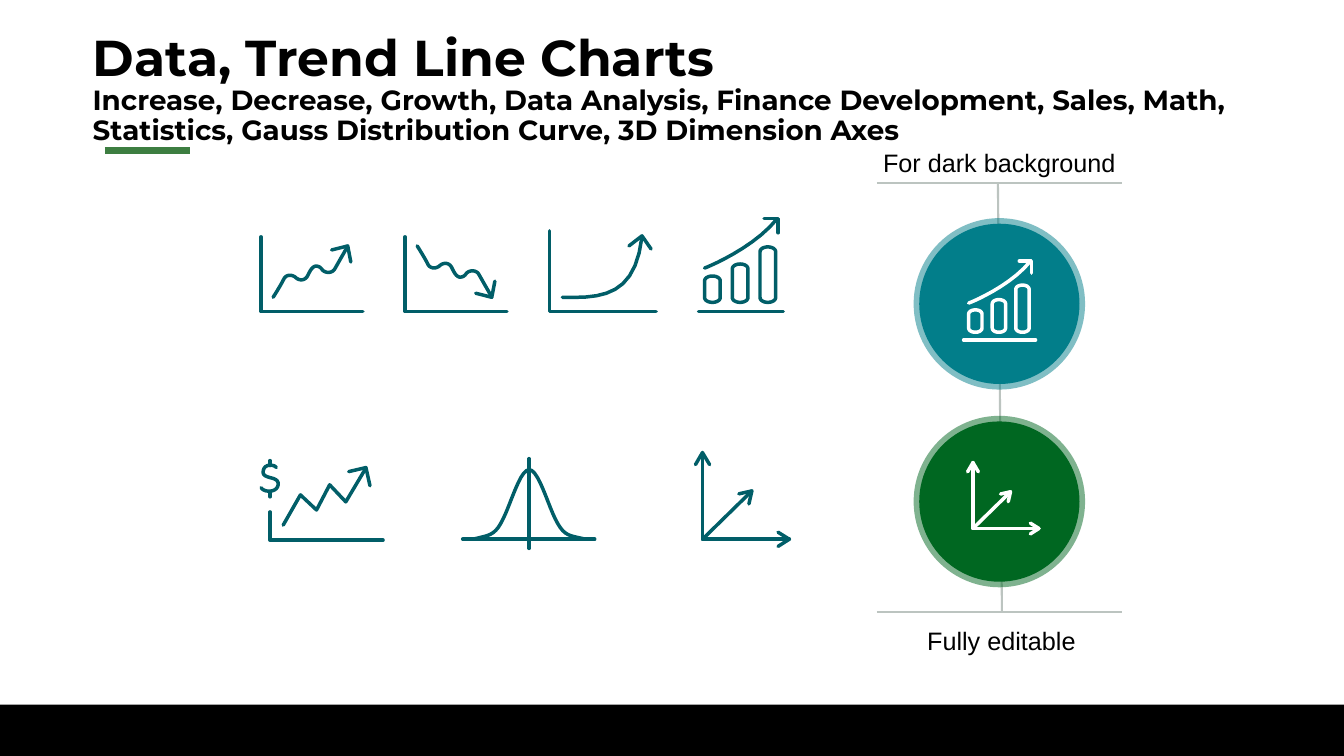
from dataclasses import dataclass

from lxml.etree import SubElement
from pptx import Presentation
from pptx.dml.color import RGBColor
from pptx.enum.shapes import MSO_CONNECTOR, MSO_SHAPE as Preset
from pptx.enum.text import MSO_ANCHOR as Anchor, PP_ALIGN as Align
from pptx.oxml.ns import qn
from pptx.util import Pt

BLACK = RGBColor(0x00, 0x00, 0x00)
WHITE = RGBColor(0xFF, 0xFF, 0xFF)
INK = RGBColor(0x01, 0x5E, 0x68)
TEAL = RGBColor(0x02, 0x7E, 0x8A)
GREEN = RGBColor(0x00, 0x67, 0x21)
ACCENT = RGBColor(0x3D, 0x7E, 0x41)
GRAY = RGBColor(0xBC, 0xC4, 0xC0)

Point = tuple[float, float]
Stroke = list[Point]
STEPS = 10


def curve(*points: Point) -> Stroke:
    """Flatten chained cubic Beziers: a start, then three points for each."""
    line = [points[0]]
    for i in range(0, len(points) - 1, 3):
        ends = points[i:i + 4]
        for step in range(1, STEPS + 1):
            t = step / STEPS
            u = 1 - t
            parts = (u ** 3, 3 * u * u * t, 3 * u * t * t, t ** 3)
            line.append((sum(k * p[0] for k, p in zip(parts, ends)),
                         sum(k * p[1] for k, p in zip(parts, ends))))
    return line


def bar(left: float, top: float) -> Stroke:
    """Outline of a round-ended bar that stands on the common base."""
    mid, right, base, end = left + 5.6, left + 11.2, 59.8, 3.6
    head, foot = top + end, base - end
    return (curve((left, head), (left, top + 1.4), (left + 2.6, top), (mid, top),
                  (right - 2.6, top), (right, top + 1.4), (right, head))
            + curve((right, foot), (right, base - 1.4), (right - 2.6, base), (mid, base),
                    (left + 2.6, base), (left, base - 1.4), (left, foot))
            + [(left, head)])


def flip(stroke: Stroke, height: float) -> Stroke:
    return [(x, height - y) for x, y in stroke]


FRAME = [(72.7, 53.3), (0, 53.3), (0, 0)]
TREND = [
    curve((8.6, 43.2), (8.6, 43.2), (13.7, 35.3), (16.6, 29.5),
          (18.5, 26.8), (22.5, 26.8), (25.2, 29.5),
          (28, 31.6), (31.5, 31), (33.1, 28.1),
          (34.6, 25.2), (36, 21.6), (38.9, 20.9),
          (41, 20.9), (42.5, 21.6), (43.9, 23.8),
          (46.8, 26.4), (51, 25.7), (52.6, 23),
          (56.2, 16.6), (61.2, 7.9), (61.2, 7.9)),
    [(64.1, 18), (61.9, 6.5), (50.4, 9.4)],
]
RISE = [FRAME, *TREND]
FALL = [FRAME, *(flip(stroke, 49.7) for stroke in TREND)]
GROWTH = [
    [(0, 0), (0, 57.6), (76.3, 57.6)],
    curve((9.4, 47.5), (38.9, 48.2), (61.2, 46.1), (66.2, 4.3)),
    [(72.7, 13), (66.2, 3.6), (56.9, 10.8)],
]
BARS = [
    [(0, 66.2), (60.5, 66.2)],
    *(bar(4.3 + 19.8 * i, top) for i, top in enumerate((41, 32.4, 20.2))),
    curve((4.3, 35.3), (6.5, 34.6), (39.6, 20.9), (56.2, 0)),
    [(56.9, 10.1), (56.9, 0), (46.8, 0)],
]
MONEY = [
    [(87.1, 56.9), (6.5, 56.9), (6.5, 36.7)],
    [(15.8, 46.1), (28.1, 24.5), (39.6, 35.3), (49, 17.3), (60.5, 29.5), (74.2, 6.5)],
    [(77.8, 18), (74.9, 5), (62.6, 7.9)],
    curve((10.8, 5), (10.1, 2.9), (1.4, 1.4), (1.4, 8.6),
          (2.2, 13.7), (13, 10.8), (12.2, 17.3),
          (11.5, 23), (2.2, 23), (0, 19.4)),
    [(6.5, 3.6), (6.5, 0)],
    [(6.5, 25.9), (6.5, 22.3)],
]
BELL = [
    [(0, 57.6), (94.3, 57.6)],
    curve((87.8, 57.6), (76.3, 54.7), (72.7, 56.2), (66.2, 43.2),
          (60.5, 31.7), (54, 7.9), (47.5, 7.9),
          (41, 7.9), (34.6, 31.7), (28.8, 43.2),
          (23, 55.4), (18.7, 54.7), (7.2, 57.6)),
    [(47.5, 0), (47.5, 64.1)],
]
AXES = [
    [(5, 0), (5, 61.9), (67, 61.9)],
    [(10.1, 8.6), (5, 0), (0, 8.6)],
    [(59, 67), (67, 61.9), (59, 56.9)],
    [(5, 61.9), (40.3, 27.4)],
    [(38.2, 36.7), (40.3, 27.4), (31, 29.5)],
]


@dataclass
class Icon:
    strokes: list[Stroke]
    left: float
    top: float
    color: RGBColor = INK
    scale: float = 1


@dataclass
class Rule:
    start: Point
    end: Point
    color: RGBColor = GRAY
    width: float = 1.5


@dataclass
class Disc:
    top: float
    color: RGBColor


@dataclass
class Label:
    text: str
    left: float
    top: float
    width: float


ICONS = [
    Icon(RISE, 186.5, 169.2), Icon(FALL, 289.4, 169.2),
    Icon(GROWTH, 392.4, 164.9), Icon(BARS, 499, 156.2),
    Icon(MONEY, 186.5, 329), Icon(BELL, 330.5, 327.6), Icon(AXES, 496.8, 323.3),
    Icon(BARS, 688.3, 186.5, WHITE, 0.85), Icon(AXES, 691.2, 330.5, WHITE, 0.76),
]
RULES = [
    Rule((74.9, 107.3), (135.4, 107.3), ACCENT, 5),
    Rule((712.8, 131), (715.7, 437)),
    Rule((626.4, 131), (801.4, 131)),
    Rule((626.4, 437), (801.4, 437)),
]
DISCS = [Disc(159.8, TEAL), Disc(301, GREEN)]
LABELS = [Label("For dark background", 623.5, 101.5, 180.7),
          Label("Fully editable", 601.9, 442.8, 226.8)]


def draw_icon(shapes, icon: Icon) -> None:
    def place(point: Point) -> tuple[int, int]:
        return (Pt(icon.left + icon.scale * point[0]),
                Pt(icon.top + icon.scale * point[1]))

    pen = shapes.build_freeform(*place(icon.strokes[0][0]))
    for i, stroke in enumerate(icon.strokes):
        if i:
            pen.move_to(*place(stroke[0]))
        pen.add_line_segments([place(p) for p in stroke[1:]], close=False)
    shape = pen.convert_to_shape()
    shape.shadow.inherit = False
    shape.fill.background()
    shape.line.color.rgb = icon.color
    shape.line.width = Pt(2.5)
    edge = shape.line._get_or_add_ln()
    edge.set("cap", "rnd")
    SubElement(edge, qn("a:round"))


def draw_rule(shapes, rule: Rule) -> None:
    line = shapes.add_connector(MSO_CONNECTOR.STRAIGHT,
                                *map(Pt, rule.start + rule.end))
    line.line.color.rgb = rule.color
    line.line.width = Pt(rule.width)
    SubElement(line._element.spPr, qn("a:effectLst"))


def draw_disc(shapes, disc: Disc) -> None:
    """Draw a filled circle with a half-clear rim."""
    shape = shapes.add_shape(Preset.OVAL, *map(Pt, (656.6, disc.top, 114.5, 114.5)))
    shape.shadow.inherit = False
    shape.fill.solid()
    shape.fill.fore_color.rgb = disc.color
    shape.line.color.rgb = disc.color
    shape.line.width = Pt(8)
    tint = shape.line._get_or_add_ln().find(".//" + qn("a:srgbClr"))
    SubElement(tint, qn("a:alpha"), val="50000")


def draw_label(shapes, label: Label) -> None:
    box = shapes.add_textbox(*map(Pt, (label.left, label.top, label.width, 29)))
    box.text_frame.word_wrap = True
    para = box.text_frame.paragraphs[0]
    para.text = label.text
    para.alignment = Align.CENTER
    para.font.name, para.font.size = "Arial", Pt(18)
    para.font.color.rgb = BLACK


def draw_title(shapes) -> None:
    frame = shapes.add_textbox(*map(Pt, (66.2, 28.8, 828, 70.6))).text_frame
    frame.word_wrap = True
    frame.vertical_anchor = Anchor.MIDDLE
    frame.margin_left = frame.margin_right = frame.margin_top = frame.margin_bottom = 0
    para = frame.paragraphs[0]
    para.line_spacing = 0.9
    para.font.name, para.font.bold = "Montserrat", True
    para.font.color.rgb = BLACK
    head = para.add_run()
    head.text, head.font.size = "Data, Trend Line Charts", Pt(36)
    para.add_line_break()
    sub = para.add_run()
    sub.text = ("Increase, Decrease, Growth, Data Analysis, Finance Development, Sales, Math, "
                "Statistics, Gauss Distribution Curve, 3D Dimension Axes")
    sub.font.size = Pt(19.8)


def main() -> None:
    deck = Presentation()
    deck.slide_width, deck.slide_height = Pt(960), Pt(540)
    shapes = deck.slides.add_slide(deck.slide_layouts[6]).shapes
    band = shapes.add_shape(Preset.RECTANGLE, *map(Pt, (0, 503.3, 960, 36.7)))
    band.shadow.inherit = False
    band.fill.solid()
    band.fill.fore_color.rgb = BLACK
    band.line.fill.background()
    draw_title(shapes)
    for draw, items in ((draw_rule, RULES), (draw_disc, DISCS),
                        (draw_label, LABELS), (draw_icon, ICONS)):
        for item in items:
            draw(shapes, item)
    deck.save("out.pptx")


if __name__ == "__main__":
    main()
